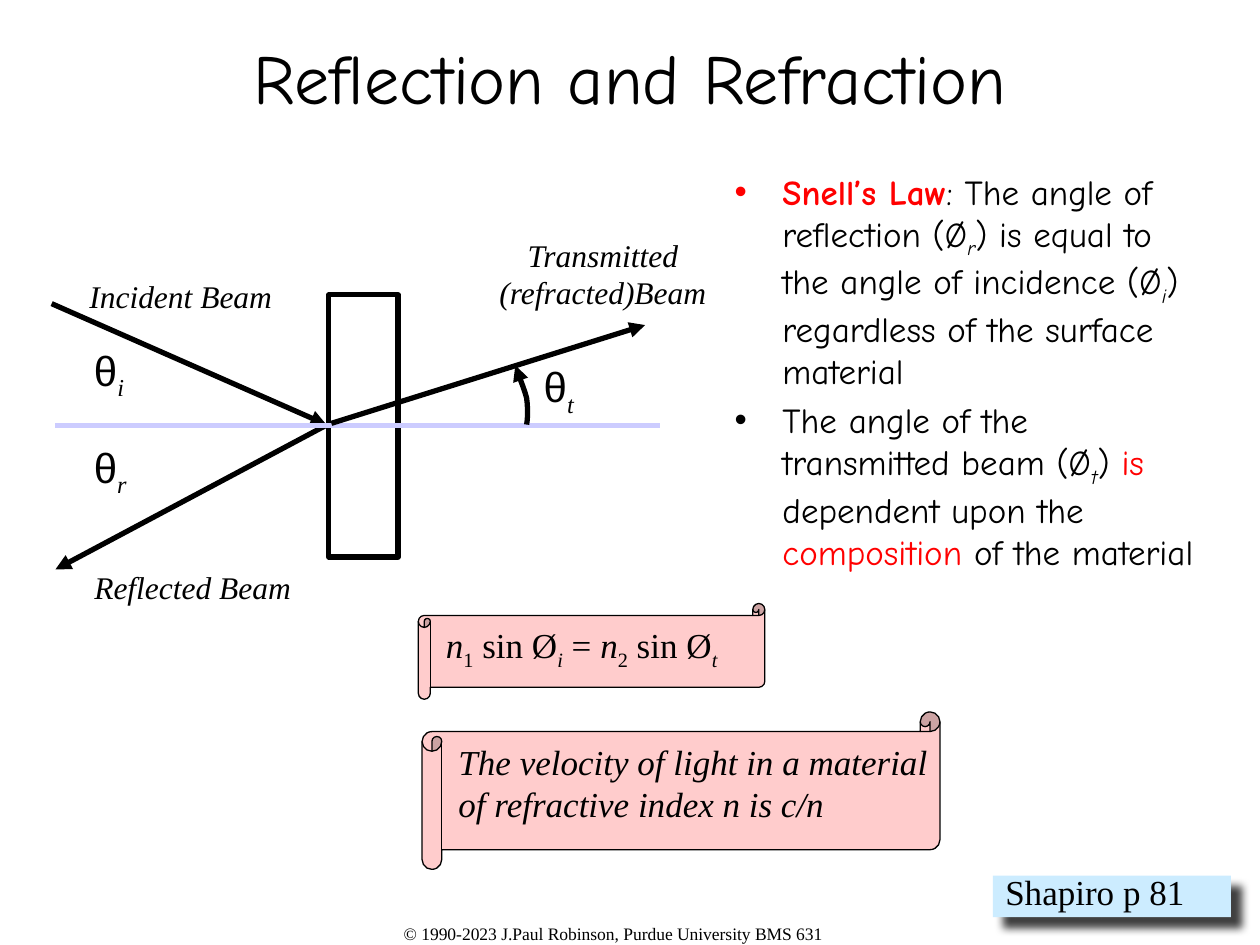
import pptx
import pptx.dml.color
import pptx.enum.shapes
import pptx.enum.text
import pptx.oxml.ns
import pptx.util
from lxml import etree

Inches = pptx.util.Inches
Pt = pptx.util.Pt
SHAPES = pptx.enum.shapes.MSO_SHAPE
ALIGN = pptx.enum.text.PP_ALIGN
ANCHOR = pptx.enum.text.MSO_ANCHOR
qn = pptx.oxml.ns.qn

COLORS = {"ink": "000000", "red": "FF0000", "paper": "FFFFFF",
          "axis": "CCCCFF", "scroll": "FFCCCC", "note": "CCECFF"}
SERIF = "Times New Roman"
COMIC = "Comic Neue"
SUB = {"italic": True, "sub": True}


def tint(name):
    return pptx.dml.color.RGBColor.from_string(COLORS[name])


def apply(item, values):
    for name, value in values.items():
        setattr(item, name, value)


def place(item, x, y, w, h):
    apply(item, {"left": Inches(x), "top": Inches(y),
                 "width": Inches(w), "height": Inches(h)})


def write(para, runs, size, font=SERIF, **form):
    apply(para, form)
    for text, style in runs:
        run = para.add_run()
        run.text = text
        style = dict(style)
        sub = style.pop("sub", False)
        run.font.color.rgb = tint(style.pop("color", "ink"))
        apply(run.font, {"size": Pt(size), "name": font,
                         "bold": False, "italic": False, **style})
        if sub:
            run._r.get_or_add_rPr().set("baseline", "-25000")


def add_text(slide, box, lines, size, wrap=True, anchor=ANCHOR.TOP, **form):
    label = slide.shapes.add_textbox(*map(Inches, box))
    frame = label.text_frame
    apply(frame, {"word_wrap": wrap, "vertical_anchor": anchor})
    for i, runs in enumerate(lines):
        para = frame.add_paragraph() if i else frame.paragraphs[0]
        write(para, runs, size, **form)


def add_shape(slide, kind, box, fill, width=None):
    shape = slide.shapes.add_shape(kind, *map(Inches, box))
    shape.shadow.inherit = False
    shape.fill.solid()
    shape.fill.fore_color.rgb = tint(fill)
    if width is None:
        shape.line.fill.background()
    else:
        stroke(shape, "ink", width)
    return shape


def stroke(shape, color, width, arrow=False):
    shape.line.color.rgb = tint(color)
    shape.line.width = Pt(width)
    if arrow:
        etree.SubElement(shape.line._get_or_add_ln(), qn("a:tailEnd"), type="triangle")


def add_line(slide, start, end, color="ink", arrow=True):
    line = slide.shapes.add_connector(
        pptx.enum.shapes.MSO_CONNECTOR.STRAIGHT, *map(Inches, start + end))
    stroke(line, color, 3, arrow)
    etree.SubElement(line._element.spPr, qn("a:effectLst"))


def add_curve(slide, nodes, steps=6):
    points = [nodes[0]]
    for k in range(0, len(nodes) - 1, 3):
        a, b, c, d = nodes[k:k + 4]
        for t in (n / steps for n in range(1, steps + 1)):
            u = 1 - t
            points.append(tuple(
                u**3 * p + 3 * u * u * t * q + 3 * u * t * t * r + t**3 * s
                for p, q, r, s in zip(a, b, c, d)))
    first, *rest = [(Inches(x), Inches(y)) for x, y in points]
    build = slide.shapes.build_freeform(*first)
    build.add_line_segments(rest, close=False)
    curve = build.convert_to_shape()
    curve.shadow.inherit = False
    curve.fill.background()
    stroke(curve, "ink", 3, True)


def draw_title(slide, box):
    title = slide.shapes.title
    place(title, *box)
    title.text_frame.vertical_anchor = ANCHOR.MIDDLE
    write(title.text_frame.paragraphs[0], [("Reflection and Refraction", {})],
          40, COMIC, alignment=ALIGN.CENTER)


def draw_body(slide, box):
    red = {"color": "red"}
    points = [
        [("Snell’s Law", {"bold": True, **red}), (": The angle of reflection (Ø", {}),
         ("r", SUB), (") is equal to the angle of incidence (Ø", {}),
         ("i", SUB), (") regardless of the surface material", {})],
        [("The angle of the transmitted beam (Ø", {}), ("t", SUB), (") ", {}),
         ("is ", red), ("dependent upon the ", {}), ("composition", red),
         (" of the material", {})],
    ]
    body = slide.placeholders[1]
    place(body, *box)
    frame = body.text_frame
    frame.auto_size = pptx.enum.text.MSO_AUTO_SIZE.NONE
    for i, runs in enumerate(points):
        para = frame.add_paragraph() if i else frame.paragraphs[0]
        props = para._p.get_or_add_pPr()
        props.set("marL", str(Inches(0.38)))
        props.set("indent", str(Inches(-0.38)))
        etree.SubElement(props, qn("a:buChar"), char="•")
        write(para, runs, 20, COMIC, space_before=Pt(4 * i))


def draw_beams(slide, box):
    x, y, w, h = box

    def at(dx, dy):
        return x + dx, y + dy

    add_shape(slide, SHAPES.RECTANGLE, at(2.26, 0.52) + (0.55, 2.08), "paper", 3)
    add_line(slide, at(0.06, 0.59), at(2.24, 1.55))
    add_line(slide, at(2.23, 1.56), at(0.09, 2.7))
    add_line(slide, at(0.09, 1.56), at(4.89, 1.56), "axis", False)
    add_line(slide, at(2.28, 1.54), at(4.77, 0.76))
    add_curve(slide, [at(3.83, 1.55), at(3.84, 1.49), at(3.84, 1.42), at(3.83, 1.34),
                      at(3.81, 1.26), at(3.75, 1.12), at(3.74, 1.08)])

    middle = {"anchor": ANCHOR.MIDDLE, "alignment": ALIGN.CENTER}
    for sign, dx, dy in [("t", 3.57, 1.02), ("i", 0, 0.89), ("r", 0.01, 1.66)]:
        runs = [("θ", {"name": "Arial"}), (sign, SUB)]
        add_text(slide, at(dx, dy) + (1.03, 0.5), [runs], 24, **middle)
    for lines, dx, dy, wide, tall in [
            (["Incident Beam"], 0.26, 0.33, 1.65, 0.4),
            (["Reflected Beam"], 0.3, 2.64, 1.76, 0.4),
            (["Transmitted", "(refracted)Beam"], 3.51, 0, 1.85, 0.7)]:
        add_text(slide, at(dx, dy) + (wide, tall),
                 [[(line, {"italic": True})] for line in lines], 18, wrap=False, **middle)


def draw_scroll(slide, box, inset, runs):
    x, y, w, h = box
    dx, dy = inset
    add_shape(slide, SHAPES.HORIZONTAL_SCROLL, box, "scroll", 0.75)
    add_text(slide, (x + dx, y + dy, w, h - 2 * dy), [runs], 20)


def draw_note(slide, box):
    note = add_shape(slide, SHAPES.RECTANGLE, box, "note")
    cast = etree.SubElement(note._element.spPr.find(qn("a:effectLst")), qn("a:outerShdw"),
                            blurRad=str(Pt(5)), dist=str(Pt(8.5)), dir="2700000",
                            algn="tl", rotWithShape="0")
    shade = etree.SubElement(cast, qn("a:srgbClr"), val=COLORS["ink"])
    etree.SubElement(shade, qn("a:alpha"), val="75000")
    apply(note.text_frame, {"word_wrap": True, "vertical_anchor": ANCHOR.TOP})
    write(note.text_frame.paragraphs[0], [("Shapiro p 81", {})], 20,
          alignment=ALIGN.LEFT, line_spacing=0.7)


def draw_footer(slide, box):
    text = "© 1990-2023 J.Paul Robinson, Purdue University BMS 631"
    add_text(slide, box, [[(text, {})]], 10, alignment=ALIGN.CENTER)


def main():
    deck = pptx.Presentation()
    apply(deck, {"slide_width": Inches(10), "slide_height": Inches(7.5)})
    slide = deck.slides.add_slide(deck.slide_layouts[1])
    draw_footer(slide, (1.24, 7.28, 7.25, 0.33))
    draw_title(slide, (0.75, 0.13, 8.5, 0.96))
    draw_body(slide, (5.73, 1.3, 3.94, 5.37))
    draw_note(slide, (7.88, 6.95, 1.89, 0.33))
    draw_beams(slide, (0.35, 1.82, 5.36, 3.04))
    slant, low = {"italic": True}, {"sub": True}
    draw_scroll(slide, (3.32, 4.79, 2.75, 0.76), (0.12, 0.11), [
        ("n", slant), ("1", low), (" sin Ø", {}), ("i", SUB), (" = ", {}),
        ("n", slant), ("2", low), (" sin Ø", {}), ("t", SUB)])
    draw_scroll(slide, (3.35, 5.65, 4.11, 1.25), (0.19, 0.18), [
        ("The velocity of light in a material of refractive index n is c/n", slant)])
    deck.save("out.pptx")


if __name__ == "__main__":
    main()
